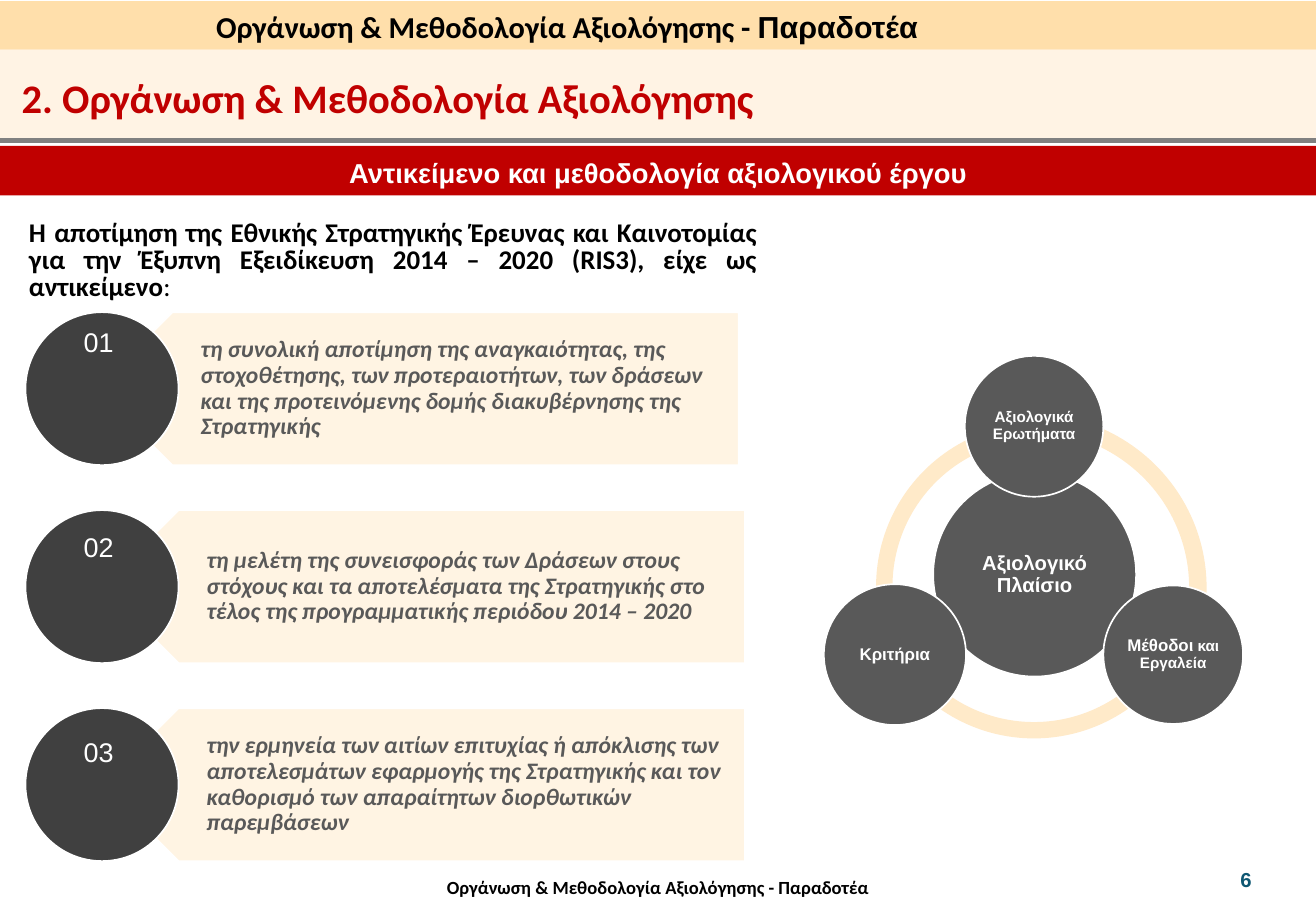
from lxml import etree
from pptx import Presentation
from pptx.dml.color import RGBColor
from pptx.enum.shapes import MSO_CONNECTOR, MSO_SHAPE as SHAPE
from pptx.enum.text import MSO_ANCHOR as ANCHOR, PP_ALIGN as ALIGN
from pptx.oxml.ns import qn
from pptx.util import Inches, Pt

COLORS = {
    "black": "000000", "white": "FFFFFF", "red": "C00000", "line": "808080",
    "band": "FFDFAB", "title_band": "FFE9CA", "cream": "FFEAC9",
    "gray": "595959", "dark": "404040", "number": "0E5772",
}
SECTION = "Οργάνωση & Μεθοδολογία Αξιολόγησης"
GOALS = [
    (0.58, "τη συνολική αποτίμηση της αναγκαιότητας, της στοχοθέτησης, των προτεραιοτήτων, "
           "των δράσεων και της προτεινόμενης δομής διακυβέρνησης της Στρατηγικής"),
    (0.63, "τη μελέτη της συνεισφοράς των Δράσεων στους στόχους και τα αποτελέσματα της "
           "Στρατηγικής στο τέλος της προγραμματικής περιόδου 2014 – 2020"),
    (0.63, "την ερμηνεία των αιτίων επιτυχίας ή απόκλισης των αποτελεσμάτων εφαρμογής της "
           "Στρατηγικής και τον καθορισμό των απαραίτητων διορθωτικών παρεμβάσεων"),
]
ARCS = [
    (0.43, 0.55, 2.7, 2.7, (92.9, 160.5, 0.05)),
    (0.38, 0.45, 2.7, 2.7, (18, 90, 0.05)),
    (0.22, 0.47, 2.93, 2.87, (163.19, 15.09, 0.05)),
]
CIRCLES = [
    (0.9, 0.96, 1.67, 1.68, [("Αξιολογικό Πλαίσιο", 12)]),
    (1.16, 0, 1.14, 1.16, [("Αξιολογικά Ερωτήματα", 9)]),
    (2.3, 1.89, 1.15, 1.14, [("Μέθοδοι", 10), (" και Εργαλεία", 9)]),
    (0, 1.88, 1.17, 1.16, [("Κριτήρια", 10)]),
]


def rgb(name):
    """Return the named colour."""
    return RGBColor.from_string(COLORS[name])


def add_shape(s, kind, x, y, w, h, fill, line=None, alpha=None):
    """Add a flat preset shape, with optional outline and opacity percentage."""
    sp = s.shapes.add_shape(kind, Inches(x), Inches(y), Inches(w), Inches(h))
    sp.shadow.inherit = False
    sp.fill.solid()
    sp.fill.fore_color.rgb = rgb(fill)
    if alpha:
        clr = sp.fill._xPr.find(qn("a:solidFill"))[0]
        etree.SubElement(clr, qn("a:alpha"), val=str(alpha * 1000))
    if line:
        sp.line.color.rgb = rgb(line)
        sp.line.width = Pt(1)
    else:
        sp.line.fill.background()
    return sp


def write(sp, runs, color, font="Calibri", bold=True, italic=False, align=ALIGN.LEFT,
          anchor=ANCHOR.TOP, spacing=None, insets=(0.1, 0.05, 0.1, 0.05)):
    """Write one paragraph of (text, size) runs into a shape."""
    tf = sp.text_frame
    tf.word_wrap = True
    tf.vertical_anchor = anchor
    tf.margin_left, tf.margin_top, tf.margin_right, tf.margin_bottom = map(Inches, insets)
    p = tf.paragraphs[0]
    p.alignment = align
    p.line_spacing = spacing
    for text, size in runs:
        r = p.add_run()
        r.text = text
        r.font.name = font
        r.font.size = Pt(size)
        r.font.bold = bold
        r.font.italic = italic
        r.font.color.rgb = rgb(color)
    return p


def add_text(s, x, y, w, h, runs, color, **style):
    """Add a text box holding one paragraph."""
    box = s.shapes.add_textbox(Inches(x), Inches(y), Inches(w), Inches(h))
    return write(box, runs, color, **style)


def add_header(s, x, y, w):
    """Draw the top bands, the title and the red banner."""
    add_shape(s, SHAPE.RECTANGLE, x, y + 0.01, w, 0.4, "band")
    add_shape(s, SHAPE.RECTANGLE, x, y + 0.41, w, 0.75, "title_band", alpha=50)
    rule = s.shapes.add_connector(MSO_CONNECTOR.STRAIGHT, Inches(x), Inches(y + 1.16),
                                  Inches(x + w), Inches(y + 1.16))
    rule.line.color.rgb = rgb("line")
    rule.line.width = Pt(3)
    etree.SubElement(rule._element.spPr, qn("a:effectLst"))
    p = add_text(s, x + 1.68, y + 0.02, 8.55, 0.4,
                 [(SECTION + " - ", 18), ("Παραδοτέα", 18)], "black")
    p.runs[1].font.name = "Arial"
    add_text(s, x + 0.08, y + 0.55, w - 0.08, 0.5, [("2. " + SECTION, 24)], "red")
    banner = add_shape(s, SHAPE.RECTANGLE, x, y + 1.2, w, 0.41, "red")
    write(banner, [("Αντικείμενο και μεθοδολογία αξιολογικού έργου", 16.2)], "white",
          font="Arial", align=ALIGN.CENTER, anchor=ANCHOR.MIDDLE, spacing=1.1)


def add_intro(s, x, y, w, h):
    """Write the lead sentence above the goals."""
    p = add_text(s, x, y, w, h, [
        ("H αποτίμηση της Εθνικής Στρατηγικής Έρευνας και Καινοτομίας για την Έξυπνη "
         "Εξειδίκευση 2014 – 2020 (RIS3), είχε ως αντικείμενο", 16), (":", 16)],
        "black", align=ALIGN.JUSTIFY, spacing=Pt(16))
    p.runs[1].font.bold = False


def add_goals(s, x, y, size=1.26, pitch=1.63, number_pitch=1.69):
    """Draw the numbered goals, each a circle over a left-pointing plate."""
    for i, (indent, text) in enumerate(GOALS):
        top = y + i * pitch
        plate = add_shape(s, SHAPE.PENTAGON, x + indent, top, 5.29, size, "cream", "white", 50)
        plate.rotation = 180
        add_text(s, x + indent + 0.31, top, 4.98, size, [(text, 14)], "gray", italic=True,
                 anchor=ANCHOR.MIDDLE, spacing=0.9, insets=(0.55, 0.06, 0.11, 0.06))
        add_shape(s, SHAPE.OVAL, x, top, size, size, "dark", "white")
        add_text(s, x + 0.38, y + 0.06 + i * number_pitch, 0.47, 0.37,
                 [(f"{i + 1:02d}", 16)], "white", font="Arial", bold=False)


def add_framework(s, x, y):
    """Draw the ring of arcs with the central circle and its three satellites."""
    for dx, dy, w, h, angles in ARCS:
        arc = add_shape(s, SHAPE.BLOCK_ARC, x + dx, y + dy, w, h, "cream")
        for i, value in enumerate(angles):
            arc.adjustments[i] = value
    for dx, dy, w, h, runs in CIRCLES:
        circle = add_shape(s, SHAPE.OVAL, x + dx, y + dy, w, h, "gray", "white")
        write(circle, runs, "white", font="Arial", align=ALIGN.CENTER,
              anchor=ANCHOR.MIDDLE, spacing=0.9, insets=(0.01,) * 4)


def add_footer(s, x, y):
    """Write the footer and the slide number."""
    add_text(s, x + 2.82, y + 0.12, 5.19, 0.18, [(SECTION + " - Παραδοτέα", 11)], "black",
             align=ALIGN.CENTER, insets=(0,) * 4)
    add_text(s, x + 10.11, y, 0.52, 0.3, [("6", 12)], "number", font="Arial")


def main():
    """Build and save the slide."""
    prs = Presentation()
    prs.slide_width, prs.slide_height = Inches(10.83), Inches(7.5)
    s = prs.slides.add_slide(prs.slide_layouts[6])
    add_header(s, 0, 0, 10.83)
    add_framework(s, 6.78, 2.93)
    add_intro(s, 0.14, 1.77, 6.19, 0.76)
    add_goals(s, 0.21, 2.57)
    add_footer(s, 0, 7.09)
    prs.save("out.pptx")


if __name__ == "__main__":
    main()
